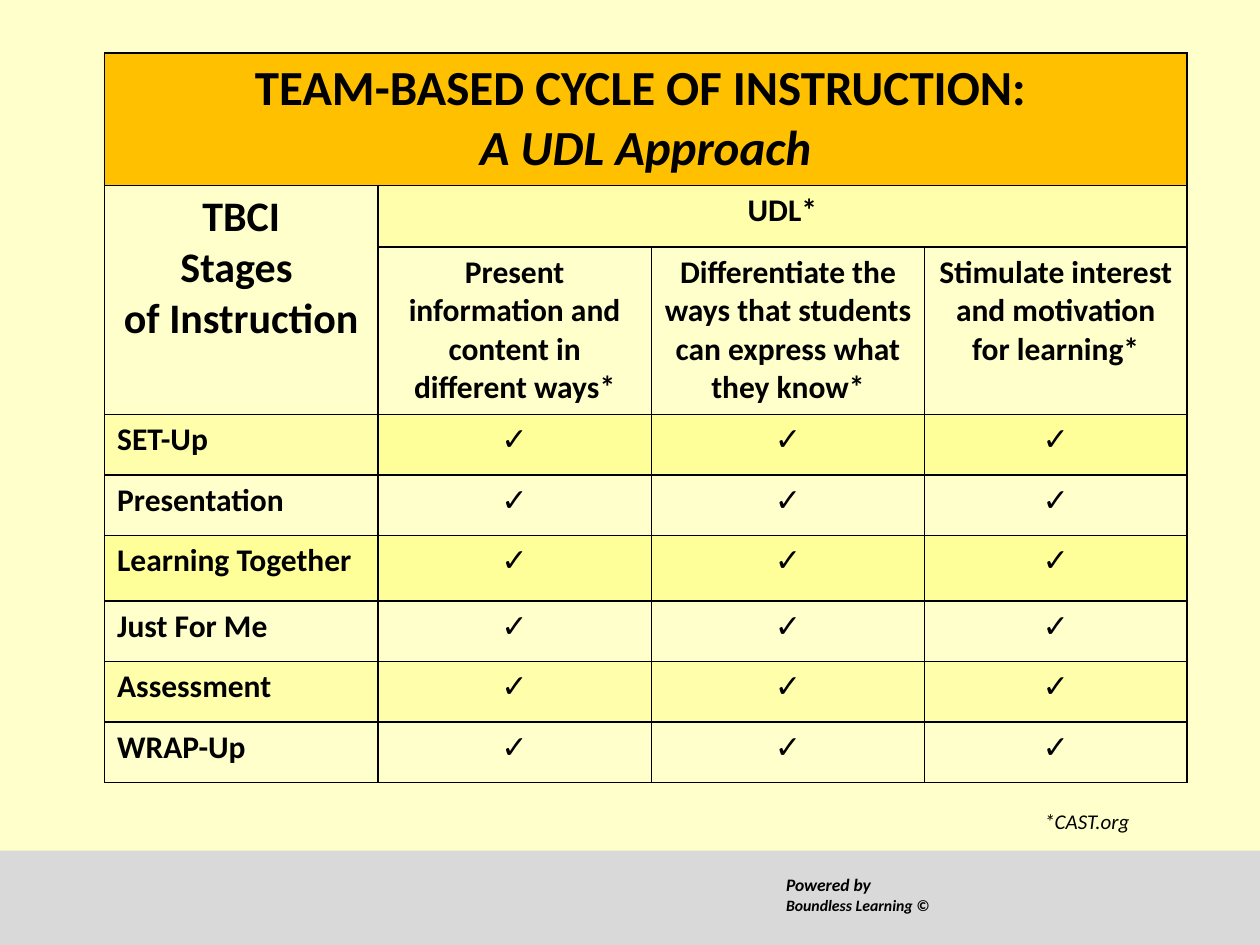
from lxml import etree
from pptx import Presentation
from pptx.dml.color import RGBColor
from pptx.enum.shapes import MSO_SHAPE
from pptx.enum.text import MSO_ANCHOR, PP_ALIGN
from pptx.oxml.ns import qn
from pptx.util import Inches, Pt

RECT = MSO_SHAPE.RECTANGLE
TOP = MSO_ANCHOR.TOP
LEFT, MID = PP_ALIGN.LEFT, PP_ALIGN.CENTER
FONT = "Calibri"
TICK = "✓"
HEX = {"page": "FFFFCC", "soft": "FFFFAB", "band": "FFFF99",
       "head": "FFC000", "foot": "D9D9D9", "ink": "000000"}
COLS = [2.17, 2.17, 2.17, 2.08]
ROWS = [1.03, 0.49, 1.33, 0.48, 0.48, 0.52, 0.48, 0.48, 0.48]
GOALS = ["Present information and content in different ways*",
         "Differentiate the ways that students can express what they know*",
         "Stimulate interest and motivation for learning*"]
STAGES = [("SET-Up", "soft", "band"), ("Presentation", "page", "page"),
          ("Learning Together", "band", "band"), ("Just For Me", "page", "page"),
          ("Assessment", "soft", "soft"), ("WRAP-Up", "page", "page")]


def paint(fill, name):
    fill.solid()
    fill.fore_color.rgb = RGBColor.from_string(HEX[name])


def write(frame, lines, size, align=LEFT, bold=True, slant=False):
    frame.text = "\n".join(lines)
    for para in frame.paragraphs:
        para.alignment = align
        for run in para.runs:
            font = run.font
            font.name, font.size = FONT, Pt(size)
            font.bold, font.italic = bold, slant
            font.color.rgb = RGBColor.from_string(HEX["ink"])


def edge(cell):
    props = cell._tc.get_or_add_tcPr()
    for side in ("lnL", "lnR", "lnT", "lnB"):
        line = etree.SubElement(props, qn("a:" + side), w=str(Pt(1)))
        fill = etree.SubElement(line, qn("a:solidFill"))
        etree.SubElement(fill, qn("a:srgbClr"), val=HEX["ink"])


def put(cell, lines, fill, size=18, align=MID):
    paint(cell.fill, fill)
    write(cell.text_frame, lines, size, align)


def add_box(slide, left, top, width, height):
    box = slide.shapes.add_shape(
        RECT, Inches(left), Inches(top), Inches(width), Inches(height))
    box.shadow.inherit = False
    paint(box.fill, "foot")
    box.line.fill.background()
    return box


def add_grid(slide):
    grid = slide.shapes.add_table(
        len(ROWS), len(COLS), Inches(0.83), Inches(0.42),
        Inches(sum(COLS)), Inches(sum(ROWS))).table
    for col, width in zip(grid.columns, COLS):
        col.width = Inches(width)
    for row, height in zip(grid.rows, ROWS):
        row.height = Inches(height)
    for cell in grid.iter_cells():
        edge(cell)

    head, stage, udl = grid.cell(0, 0), grid.cell(1, 0), grid.cell(1, 1)
    head.merge(grid.cell(0, 3))
    stage.merge(grid.cell(2, 0))
    udl.merge(grid.cell(1, 3))
    put(head, ["TEAM-BASED CYCLE OF INSTRUCTION: ", "A UDL Approach"], "head", 28)
    head.text_frame.paragraphs[1].runs[0].font.italic = True
    put(stage, ["TBCI", "Stages ", "of Instruction"], "page", 24)
    put(udl, ["UDL*"], "soft")

    for col, goal in enumerate(GOALS, 1):
        put(grid.cell(2, col), [goal], "page")
    for row, (name, first, rest) in enumerate(STAGES, 3):
        put(grid.cell(row, 0), [name], first, align=LEFT)
        for col in range(1, len(COLS)):
            put(grid.cell(row, col), [TICK], rest)


def add_note(slide):
    note = slide.shapes.add_textbox(
        Inches(8.19), Inches(6.37), Inches(1.5), Inches(0.3))
    note.text_frame.word_wrap = True
    write(note.text_frame, ["*CAST.org"], 12, bold=False, slant=True)


def add_credit(slide):
    frame = add_box(slide, 6.14, 6.89, 1.55, 0.59).text_frame
    frame.word_wrap = True
    frame.vertical_anchor = TOP
    write(frame, ["Powered by", "Boundless Learning ©"], 10, slant=True)
    frame.paragraphs[1].runs[0].font.size = Pt(9)


def main():
    deck = Presentation()
    deck.slide_width, deck.slide_height = Inches(10), Inches(7.5)
    slide = deck.slides.add_slide(deck.slide_layouts[6])
    paint(slide.background.fill, "page")
    add_box(slide, 0, 6.75, 10, 0.75)
    add_grid(slide)
    add_note(slide)
    add_credit(slide)
    deck.save("out.pptx")


if __name__ == "__main__":
    main()
